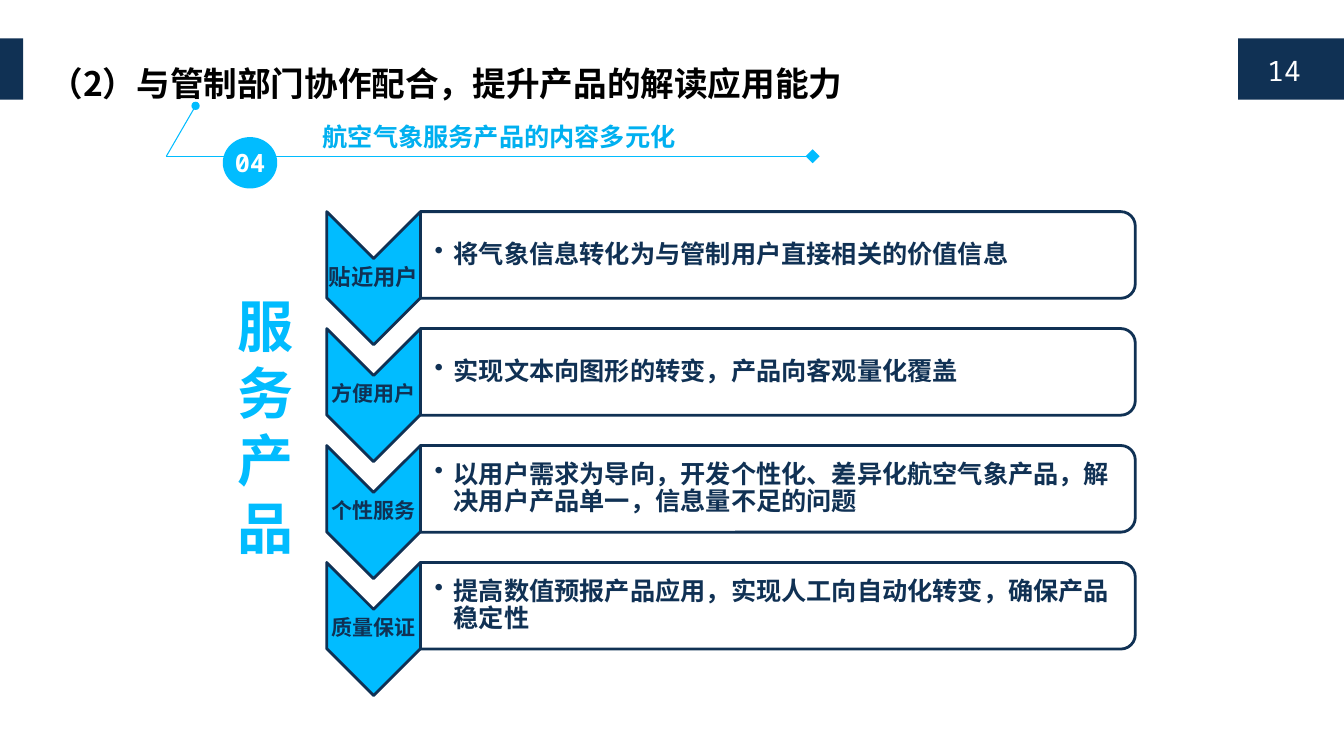
from lxml import etree
from pptx import Presentation
from pptx import util as u
from pptx.dml import color
from pptx.enum import shapes, text
from pptx.oxml import ns

NAVY, CYAN, SKY, WHITE, BLACK = "103154", "01BCFF", "00B0F0", "FFFFFF", "000000"
SANS, MONO, ARIAL = "Noto Sans CJK SC", "Noto Sans Mono", "Arial"
CENTER, LEFT = text.PP_ALIGN.CENTER, text.PP_ALIGN.LEFT
SERVICES = [
    ("贴近用户", 16, "将气象信息转化为与管制用户直接相关的价值信息"),
    ("方便用户", 15, "实现文本向图形的转变，产品向客观量化覆盖"),
    ("个性服务", 15, "以用户需求为导向，开发个性化、差异化航空气象产品，解决用户产品单一，信息量不足的问题"),
    ("质量保证", 15, "提高数值预报产品应用，实现人工向自动化转变，确保产品稳定性"),
]


def rgb(value):
    return color.RGBColor.from_string(value)


def add_xml(parent, tag, **attributes):
    element = etree.SubElement(parent, ns.qn(tag))
    for name, value in attributes.items():
        element.set(name, value)
    return element


def write(shape, words, size, ink, font=ARIAL, bold=True, align=CENTER,
          insets=(0.01, 0.01, 0.01, 0.01), spacing=None):
    frame = shape.text_frame
    frame.word_wrap = True
    frame.vertical_anchor = text.MSO_ANCHOR.MIDDLE
    frame.margin_left, frame.margin_top, frame.margin_right, frame.margin_bottom = map(u.Inches, insets)
    paragraph = frame.paragraphs[0]
    paragraph.alignment = align
    if spacing:
        paragraph.line_spacing = spacing
    run = paragraph.add_run()
    run.text = words
    run.font.name = font
    run.font.size = u.Pt(size)
    run.font.bold = bold
    run.font.color.rgb = rgb(ink)
    add_xml(run.font._element, "a:ea", typeface=SANS)
    return paragraph


def add_shape(slide, kind, box, fill, line=None, turned=False):
    left, top, width, height = box
    if turned:
        left, top = left + (width - height) / 2, top + (height - width) / 2
        width, height = height, width
    shape = slide.shapes.add_shape(kind, *map(u.Inches, (left, top, width, height)))
    shape.rotation = 90 if turned else 0
    shape.shadow.inherit = False
    shape.fill.solid()
    shape.fill.fore_color.rgb = rgb(fill)
    if line:
        shape.line.color.rgb = rgb(line)
        shape.line.width = u.Pt(2)
    else:
        shape.line.fill.background()
    return shape


def add_text(slide, box, words, size, ink, **style):
    shape = slide.shapes.add_textbox(*map(u.Inches, box))
    return write(shape, words, size, ink, **style)


def add_line(slide, start, end, marker, marker_type, marker_size):
    connector = slide.shapes.add_connector(shapes.MSO_CONNECTOR.STRAIGHT, *map(u.Inches, start + end))
    connector.line.color.rgb = rgb(CYAN)
    connector.line.width = u.Pt(0.75)
    add_xml(connector.line._get_or_add_ln(), marker, type=marker_type, w=marker_size, len=marker_size)
    add_xml(connector._element.spPr, "a:effectLst")


def add_header(slide, left, top, width, height):
    rectangle = shapes.MSO_SHAPE.RECTANGLE
    add_shape(slide, rectangle, (left, top, 0.23, height), NAVY)
    number_left = left + width - 1.05
    add_shape(slide, rectangle, (number_left, top, 1.05, height), NAVY)
    add_text(slide, (number_left + 0.1, top + 0.1, 0.71, 0.44), "14", 20, WHITE, font=MONO, bold=False)
    title = slide.shapes.title
    title.left, title.top, title.width, title.height = map(u.Inches, (left + 0.39, top + 0.17, 9.55, 0.55))
    write(title, "（2）与管制部门协作配合，提升产品的解读应用能力", 24, BLACK,
          font=SANS, align=LEFT, insets=(0.1, 0.05, 0.1, 0.05))


def add_subtitle(slide, left, top, width, height):
    corner = (left, top + height)
    add_line(slide, (left + width, top + height), corner, "a:headEnd", "diamond", "lg")
    add_line(slide, corner, (left + 0.29, top), "a:tailEnd", "oval", "med")
    badge = add_shape(slide, shapes.MSO_SHAPE.OVAL, (left + 0.56, top + 0.31, 0.54, 0.51), CYAN)
    write(badge, "04", 18, WHITE, font=MONO)
    add_text(slide, (left + 1.55, top + 0.1, 6, 0.4), "航空气象服务产品的内容多元化", 18, SKY,
             font=SANS, align=LEFT, insets=(0, 0.05, 0.1, 0.05))


def add_service(slide, left, top, width, height, label, label_size, description):
    arrow_width, arrow_height = 0.93, 1.32
    add_shape(slide, shapes.MSO_SHAPE.CHEVRON, (left, top, arrow_width, arrow_height), CYAN, NAVY, turned=True)
    add_text(slide, (left, top + 0.46, arrow_width, 0.4), label, label_size, NAVY, spacing=0.9)
    panel_left, panel_width = left + arrow_width, width - arrow_width
    panel = add_shape(slide, shapes.MSO_SHAPE.ROUND_2_SAME_RECTANGLE,
                      (panel_left, top, panel_width, height), WHITE, NAVY, turned=True)
    add_xml(panel.fill._xPr.find(".//" + ns.qn("a:srgbClr")), "a:alpha", val="90000")
    paragraph = add_text(slide, (panel_left, top + 0.04, panel_width - 0.04, height - 0.08), description,
                         18, NAVY, align=LEFT, insets=(0.14, 0.01, 0.01, 0.01), spacing=0.9)
    properties = paragraph._p.get_or_add_pPr()
    properties.set("marL", str(u.Inches(0.19)))
    properties.set("indent", str(u.Inches(-0.19)))
    add_xml(properties, "a:buChar", char="•")


def add_services(slide, left, top, width, pitch):
    for index, service in enumerate(SERVICES):
        add_service(slide, left, top + index * pitch, width, 0.86, *service)


def add_side_label(slide, left, top, width, height):
    label = add_shape(slide, shapes.MSO_SHAPE.ROUNDED_RECTANGLE, (left, top, width, height), WHITE)
    write(label, "服务产品", 40, CYAN, insets=(0.1, 0.05, 0.1, 0.05), spacing=1.0)


def main():
    presentation = Presentation()
    presentation.slide_width, presentation.slide_height = u.Inches(13.33), u.Inches(7.5)
    slide = presentation.slides.add_slide(presentation.slide_layouts[5])
    add_header(slide, 0, 0.38, 13.33, 0.61)
    add_subtitle(slide, 1.65, 1.05, 6.41, 0.5)
    add_services(slide, 3.24, 2.1, 8.02, 1.16)
    add_side_label(slide, 2.14, 2.05, 0.99, 4.35)
    presentation.save("out.pptx")


if __name__ == "__main__":
    main()
